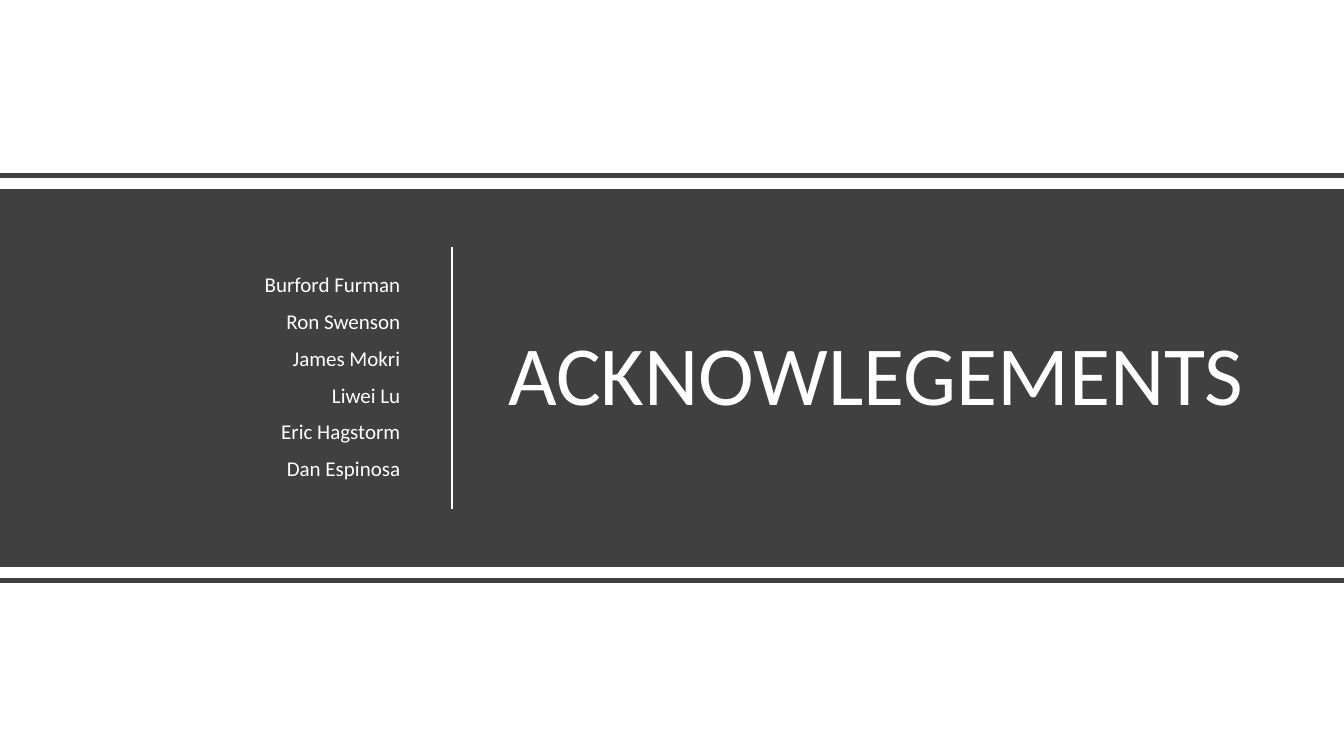
from dataclasses import dataclass

from lxml import etree
from pptx import Presentation
from pptx.dml.color import RGBColor
from pptx.enum.shapes import MSO_CONNECTOR, MSO_SHAPE
from pptx.enum.text import MSO_ANCHOR, MSO_AUTO_SIZE, PP_ALIGN
from pptx.oxml.ns import qn
from pptx.util import Inches, Pt

STRAIGHT = MSO_CONNECTOR.STRAIGHT
RECTANGLE = MSO_SHAPE.RECTANGLE
MIDDLE = MSO_ANCHOR.MIDDLE
NO_FIT = MSO_AUTO_SIZE.NONE
LEFT, RIGHT = PP_ALIGN.LEFT, PP_ALIGN.RIGHT


@dataclass(frozen=True)
class Theme:
    dark: RGBColor = RGBColor(0x40, 0x40, 0x40)
    light: RGBColor = RGBColor(0xFF, 0xFF, 0xFF)
    font: str = "Calibri"
    title_size: Pt = Pt(60)
    name_size: Pt = Pt(15)
    rule_width: Pt = Pt(4)
    divider_width: Pt = Pt(1.5)


theme = Theme()
NAMES = ["Burford Furman", "Ron Swenson", "James Mokri",
         "Liwei Lu", "Eric Hagstorm", "Dan Espinosa"]

prs = Presentation()
prs.slide_width, prs.slide_height = Inches(13.33), Inches(7.5)
W, H = prs.slide_width, prs.slide_height
middle = H // 2
band_height = H // 2
rule_offset = Inches(2.01)
text_height = Inches(2.21)
divider_x = Inches(4.48)
divider_height = Inches(2.6)

s = prs.slides.add_slide(prs.slide_layouts.get_by_name("Section Header"))
title, names = s.placeholders[0], s.placeholders[1]


def add_line(x1, y1, x2, y2, color, width):
    line = s.shapes.add_connector(STRAIGHT, x1, y1, x2, y2)
    line.line.color.rgb = color
    line.line.width = width
    etree.SubElement(line.element.spPr, qn("a:effectLst"))


def fill_text(sp, left, width, lines, size, align):
    sp.left, sp.top = left, middle - text_height // 2
    sp.width, sp.height = width, text_height
    tf = sp.text_frame
    tf.text = "\n".join(lines)
    tf.word_wrap = True
    tf.auto_size = NO_FIT
    tf.vertical_anchor = MIDDLE
    for i, p in enumerate(tf.paragraphs):
        p.alignment = align
        p.line_spacing = 0.9
        p.space_before = Pt(10 if i else 0)
        p.font.name = theme.font
        p.font.size = size
        p.font.bold = False
        p.font.color.rgb = theme.light


band = s.shapes.add_shape(RECTANGLE, 0, middle - band_height // 2, W, band_height)
band.shadow.inherit = False
band.fill.solid()
band.fill.fore_color.rgb = theme.dark
band.line.fill.background()
title.element.addprevious(band.element)

fill_text(title, Inches(4.94), Inches(7.52), ["ACKNOWLEGEMENTS"], theme.title_size, LEFT)
fill_text(names, Inches(0.87), Inches(3.2), NAMES, theme.name_size, RIGHT)

add_line(divider_x, middle - divider_height // 2, divider_x, middle + divider_height // 2,
         theme.light, theme.divider_width)
for y in (middle - rule_offset, middle + rule_offset):
    add_line(0, y, W, y, theme.dark, theme.rule_width)

prs.save("out.pptx")
